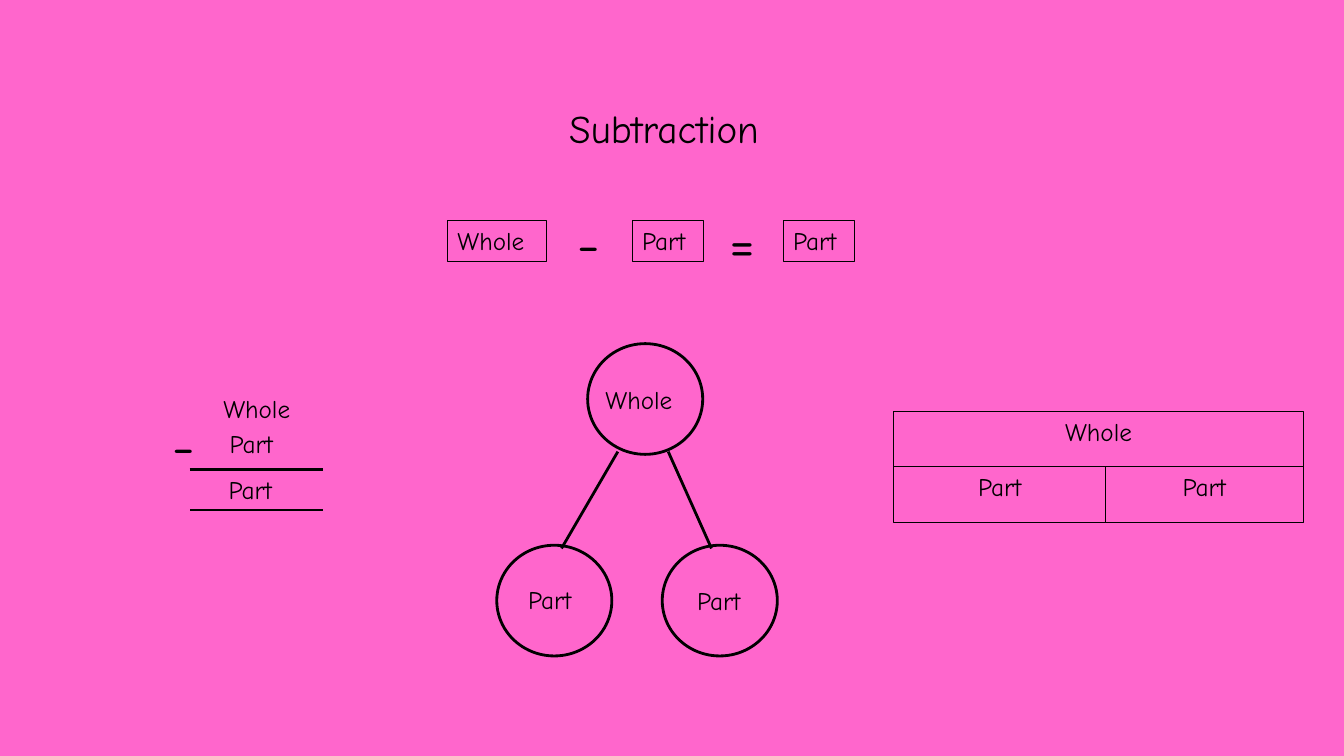
"""Build the Subtraction slide: number sentence, column, part-whole and bar models."""
from lxml import etree
from pptx import Presentation
from pptx.dml.color import RGBColor
from pptx.enum import shapes, text
from pptx.oxml import ns
from pptx.util import Cm, Pt

PINK = RGBColor(0xFF, 0x66, 0xCC)
BLACK = RGBColor(0, 0, 0)
FONT = "Comic Neue"
LEFT, CENTER = text.PP_ALIGN.LEFT, text.PP_ALIGN.CENTER


def write(shape, words, size, align, anchor=text.MSO_ANCHOR.TOP):
    frame = shape.text_frame
    frame.word_wrap = True
    frame.vertical_anchor = anchor
    paragraph = frame.paragraphs[0]
    paragraph.alignment = align
    run = paragraph.add_run()
    run.text = words
    run.font.size = Pt(size)
    run.font.name = FONT
    run.font.color.rgb = BLACK


def outline(kind, left, top, width, height, weight):
    shape = slide.shapes.add_shape(kind, Cm(left), Cm(top), Cm(width), Cm(height))
    shape.shadow.inherit = False
    shape.fill.background()
    shape.line.color.rgb = BLACK
    shape.line.width = Pt(weight)
    return shape


presentation = Presentation()
presentation.slide_width, presentation.slide_height = Cm(33.87), Cm(19.05)
slide = presentation.slides.add_slide(presentation.slide_layouts[5])
slide.background.fill.solid()
slide.background.fill.fore_color.rgb = PINK

title = slide.shapes.title
title.left, title.top, title.width, title.height = Cm(4.9), Cm(1.3), Cm(23.67), Cm(2.64)
write(title, "Subtraction", 28, CENTER, text.MSO_ANCHOR.BOTTOM)

boxes = [
    ("Whole", 11.28, 5.56, 2.49, 1.02, LEFT),
    ("Part", 15.93, 5.56, 1.8, 1.02, LEFT),
    ("Part", 19.74, 5.56, 1.8, 1.02, LEFT),
    ("Whole", 22.53, 10.36, 10.31, 1.4, CENTER),
    ("Part", 22.53, 11.76, 5.33, 1.4, CENTER),
    ("Part", 27.86, 11.76, 4.98, 1.4, CENTER),
]
for words, left, top, width, height, align in boxes:
    box = outline(shapes.MSO_SHAPE.RECTANGLE, left, top, width, height, 0.75)
    write(box, words, 18, align)

for left, top in [(14.81, 8.66), (12.52, 13.74), (16.69, 13.74)]:
    outline(shapes.MSO_SHAPE.OVAL, left, top, 2.9, 2.79, 2)

lines = [
    (4.78, 11.84, 8.13, 11.84),
    (4.8, 12.85, 8.15, 12.85),
    (14.15, 13.82, 15.57, 11.38),
    (17.93, 13.82, 16.84, 11.38),
]
for ends in lines:
    line = slide.shapes.add_connector(shapes.MSO_CONNECTOR.STRAIGHT, *map(Cm, ends))
    line.line.color.rgb = BLACK
    line.line.width = Pt(2)
    etree.SubElement(line._element.spPr, ns.qn("a:effectLst"))

labels = [
    ("-", 14.3, 5.11, 1.22, 1.96, 40),
    ("=", 18.14, 5.11, 1.22, 1.96, 40),
    ("Whole", 5.38, 9.78, 2.57, 1.02, 18),
    ("-", 4.11, 10.19, 1.22, 1.96, 40),
    ("Part", 5.54, 10.67, 1.8, 1.02, 18),
    ("Part", 5.51, 11.84, 2.49, 1.02, 18),
    ("Whole", 15.01, 9.55, 2.49, 1.02, 18),
    ("Part", 13.06, 14.61, 1.8, 1.02, 18),
    ("Part", 17.32, 14.63, 1.8, 1.02, 18),
]
for words, left, top, width, height, size in labels:
    label = slide.shapes.add_textbox(Cm(left), Cm(top), Cm(width), Cm(height))
    write(label, words, size, LEFT)

presentation.save("out.pptx")
